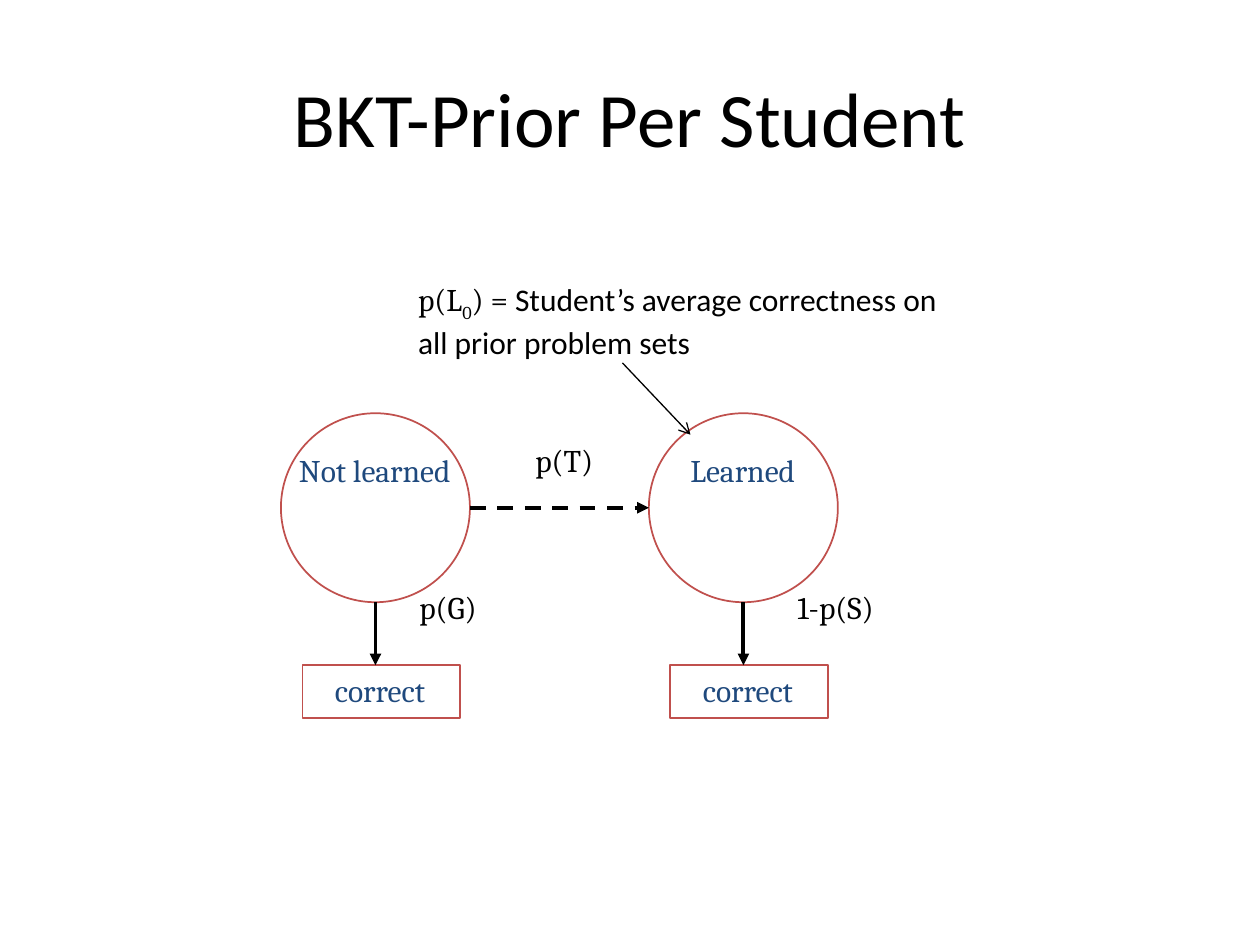
from lxml.etree import SubElement
from pptx import Presentation
from pptx.dml.color import RGBColor
from pptx.enum.dml import MSO_LINE
from pptx.enum.shapes import MSO_CONNECTOR, MSO_SHAPE
from pptx.enum.text import MSO_ANCHOR, PP_ALIGN
from pptx.oxml.ns import qn
from pptx.util import Pt

PX = 9144  # EMU per px, 100 px to the inch
BLACK, RED, NAVY = "000000", "C0504D", "1F497D"


def px(*lengths):
    return [n * PX for n in lengths]


def rgb(value):
    return RGBColor.from_string(value)


class Diagram:
    serif, sans, size = "Cambria", "Calibri", 18

    def __init__(self, prs):
        self.slide = prs.slides.add_slide(prs.slide_layouts[5])

    def style(self, font, name, size, color):
        font.name, font.size = name, Pt(size)
        font.color.rgb = rgb(color)

    def title(self, text, *box):
        sp = self.slide.shapes.title
        sp.left, sp.top, sp.width, sp.height = px(*box)
        tf = sp.text_frame
        tf.text, tf.vertical_anchor = text, MSO_ANCHOR.MIDDLE
        p = tf.paragraphs[0]
        p.alignment = PP_ALIGN.CENTER
        self.style(p.font, self.sans, 44, BLACK)

    def outline(self, kind, *box):
        sp = self.slide.shapes.add_shape(kind, *px(*box))
        sp.shadow.inherit = False
        sp.fill.background()
        sp.line.color.rgb = rgb(RED)
        sp.line.width = Pt(1)

    def text(self, runs, *box, color=BLACK, align=PP_ALIGN.LEFT):
        """Add a text box; runs are (text, font name, baseline percent)."""
        tf = self.slide.shapes.add_textbox(*px(*box)).text_frame
        tf.word_wrap = True
        p = tf.paragraphs[0]
        p.alignment = align
        for text, name, baseline in runs:
            r = p.add_run()
            r.text = text
            self.style(r.font, name, self.size, color)
            if baseline:
                r._r.get_or_add_rPr().set("baseline", str(baseline * 1000))

    def label(self, text, *box, **options):
        self.text([(text, self.serif, 0)], *box, **options)

    def arrow(self, *ends, width=2.25, head="triangle", dash=None):
        cn = self.slide.shapes.add_connector(MSO_CONNECTOR.STRAIGHT, *px(*ends))
        cn.line.color.rgb = rgb(BLACK)
        cn.line.width = Pt(width)
        if dash:
            cn.line.dash_style = dash
        SubElement(cn.line._get_or_add_ln(), qn("a:tailEnd"), type=head)
        SubElement(cn._element.spPr, qn("a:effectLst"))


def main():
    prs = Presentation()
    prs.slide_width, prs.slide_height = px(1000, 750)
    d = Diagram(prs)
    d.title("BKT-Prior Per Student", 50, 30, 900, 125)

    states = [
        (223, "Not learned", "p(G)", 323),
        (515, "Learned", "1-p(S)", 623),
    ]
    for x, state, chance, chance_x in states:
        d.outline(MSO_SHAPE.OVAL, x, 328, 150, 150)
        d.label(state, x - 17, 353, 183, 40, color=NAVY, align=PP_ALIGN.CENTER)
        d.outline(MSO_SHAPE.RECTANGLE, x + 17, 528, 125, 42)
        d.label("correct", x + 33, 528, 117, 40, color=NAVY)
        d.arrow(x + 75, 478, x + 75, 528)
        d.label(chance, chance_x, 462, 117, 40)

    d.arrow(373, 403, 515, 403, dash=MSO_LINE.DASH)
    d.label("p(T)", 415, 345, 67, 40)

    d.text([
        ("p(L", d.serif, 0),
        ("0", d.serif, -25),
        (") = ", d.serif, 0),
        ("Student’s average correctness on all prior problem sets", d.sans, 0),
    ], 322, 217, 434, 71)
    d.arrow(494, 288, 548, 345, width=0.75, head="arrow")
    prs.save("out.pptx")


if __name__ == "__main__":
    main()
